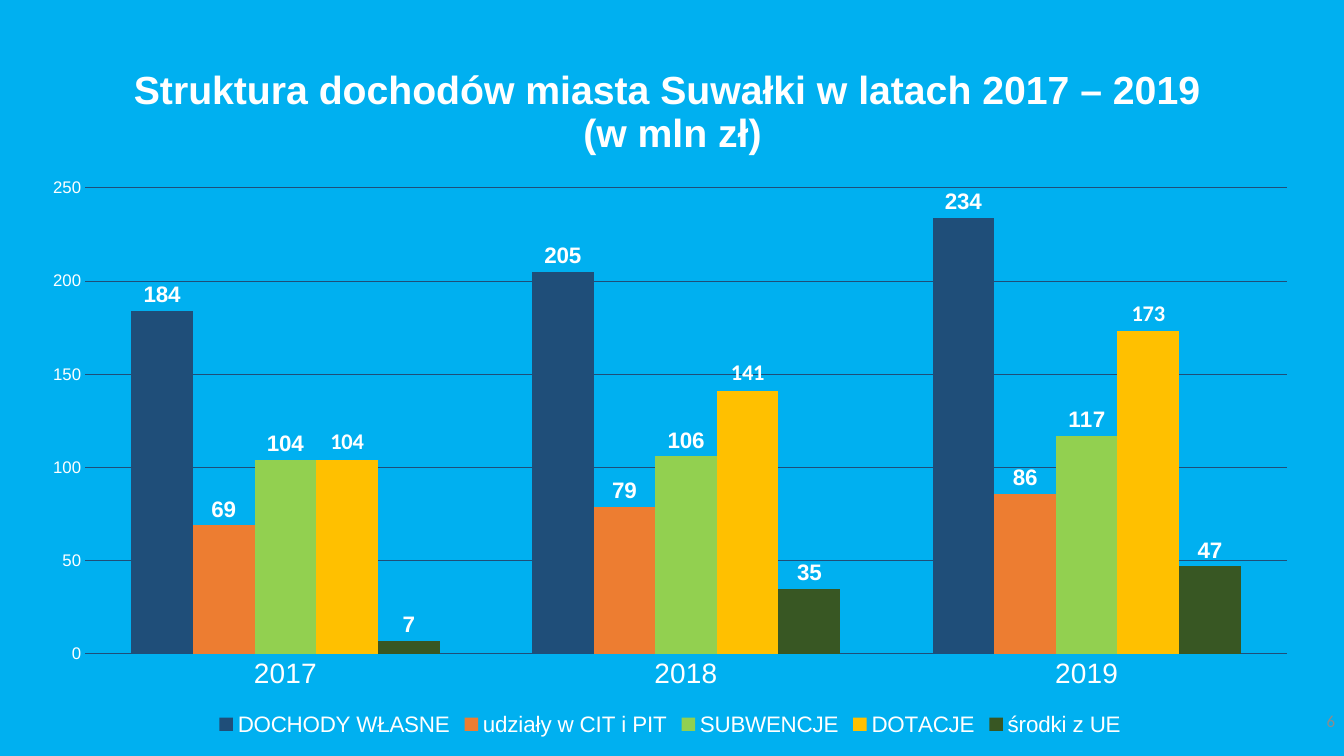
from dataclasses import dataclass

from lxml.etree import SubElement
from pptx import Presentation
from pptx.chart.data import CategoryChartData
from pptx.dml.color import RGBColor
from pptx.enum.chart import XL_CHART_TYPE as ChartType
from pptx.enum.chart import XL_LABEL_POSITION as LabelPos
from pptx.enum.chart import XL_LEGEND_POSITION as LegendPos
from pptx.enum.chart import XL_TICK_MARK as Tick
from pptx.enum.text import MSO_ANCHOR as Anchor
from pptx.enum.text import PP_ALIGN as Align
from pptx.oxml.ns import qn
from pptx.util import Inches, Pt

SKY = RGBColor(0x00, 0xB0, 0xF0)
WHITE = RGBColor(0xFF, 0xFF, 0xFF)
BLACK = RGBColor(0x00, 0x00, 0x00)
GREY = RGBColor(0x8C, 0x8C, 0x8C)
NAVY = RGBColor(0x1F, 0x4E, 0x79)
ORANGE = RGBColor(0xED, 0x7D, 0x31)
LIME = RGBColor(0x92, 0xD0, 0x50)
GOLD = RGBColor(0xFF, 0xC0, 0x00)
FOREST = RGBColor(0x38, 0x57, 0x23)

WIDTH, HEIGHT = Inches(13.33), Inches(7.5)
YEARS = ("2017", "2018", "2019")


@dataclass(frozen=True)
class Area:
    """A rectangle in percent of the slide's width and height."""
    left: float
    top: float
    width: float
    height: float

    def emu(self) -> tuple[int, ...]:
        return tuple(int(share * side / 100) for share, side in zip(
            (self.left, self.top, self.width, self.height),
            (WIDTH, HEIGHT, WIDTH, HEIGHT)))


@dataclass(frozen=True)
class Income:
    name: str
    values: tuple[int, ...]
    color: RGBColor
    label_font: str = "Arial"


@dataclass(frozen=True)
class Caption:
    area: Area
    lines: tuple[str, ...]
    align: Align
    spacing: float
    color: RGBColor
    font: dict


INCOMES = (
    Income("DOCHODY WŁASNE", (184, 205, 234), NAVY),
    Income("udziały w CIT i PIT", (69, 79, 86), ORANGE),
    Income("SUBWENCJE", (104, 106, 117), LIME),
    Income("DOTACJE", (104, 141, 173), GOLD, "Calibri"),
    Income("środki z UE", (7, 35, 47), FOREST),
)
CAPTIONS = (
    Caption(Area(6.9, 5.33, 86.27, 19.33),
            ("Struktura dochodów miasta Suwałki w latach 2017 – 2019 ", "(w mln zł)"),
            Align.CENTER, 0.9, WHITE, {"name": "Arial", "size": Pt(28), "bold": True}),
    Caption(Area(70.67, 92.67, 29.41, 5.33), ("6",),
            Align.RIGHT, 1.0, GREY, {"name": "Calibri", "size": Pt(12)}),
)
CHART_AREA = Area(2.03, 22.13, 95.65, 75.87)
# Plot rectangle as shares of the chart
PLOT = {"x": 0.045, "y": 0.036, "w": 0.935, "h": 0.8125}


def set_format(target, **values) -> None:
    for name, value in values.items():
        setattr(target, name, value)


def set_font(font, color: RGBColor, **values) -> None:
    set_format(font, **values)
    font.color.rgb = color


def add_caption(s, caption: Caption) -> None:
    tf = s.shapes.add_textbox(*caption.area.emu()).text_frame
    set_format(tf, word_wrap=True, vertical_anchor=Anchor.MIDDLE)
    p = tf.paragraphs[0]
    set_format(p, alignment=caption.align, line_spacing=caption.spacing)
    for i, line in enumerate(caption.lines):
        if i:
            p.add_line_break()
        r = p.add_run()
        r.text = line
        set_font(r.font, caption.color, **caption.font)


def place_plot(chart) -> None:
    """Fix the inner plot area inside the chart."""
    area = chart._chartSpace.chart.plotArea
    for old in area.findall(qn("c:layout")):
        area.remove(old)
    layout = SubElement(area, qn("c:layout"))
    area.insert(0, layout)
    manual = SubElement(layout, qn("c:manualLayout"))
    settings = {"layoutTarget": "inner", "xMode": "edge", "yMode": "edge", **PLOT}
    for tag, value in settings.items():
        SubElement(manual, qn(f"c:{tag}")).set("val", str(value))


def style_axes(chart) -> None:
    for axis, size in ((chart.category_axis, 20), (chart.value_axis, 12)):
        set_format(axis, major_tick_mark=Tick.NONE, minor_tick_mark=Tick.NONE)
        axis.format.line.fill.background()
        set_font(axis.tick_labels.font, WHITE, name="Arial", size=Pt(size), bold=False)
    axis = chart.value_axis
    set_format(axis, minimum_scale=0, maximum_scale=250, major_unit=50,
               has_major_gridlines=True)
    grid = axis.major_gridlines.format.line
    grid.color.rgb = NAVY
    grid.width = Pt(0.75)


def add_income_chart(s) -> None:
    data = CategoryChartData()
    data.categories = YEARS
    for income in INCOMES:
        data.add_series(income.name, income.values)
    chart = s.shapes.add_chart(
        ChartType.COLUMN_CLUSTERED, *CHART_AREA.emu(), data).chart
    set_format(chart, has_title=False, has_legend=True)
    set_font(chart.font, BLACK, name="Calibri", size=Pt(10))
    set_format(chart.legend, position=LegendPos.BOTTOM, include_in_layout=False)
    set_font(chart.legend.font, WHITE, name="Arial", size=Pt(16))
    plot = chart.plots[0]
    set_format(plot, gap_width=150, overlap=0, vary_by_categories=False)
    for series, income in zip(plot.series, INCOMES):
        fill = series.format.fill
        fill.solid()
        fill.fore_color.rgb = income.color
        labels = series.data_labels
        set_format(labels, show_value=True, position=LabelPos.OUTSIDE_END)
        set_font(labels.font, WHITE, name=income.label_font, size=Pt(16), bold=True)
    style_axes(chart)
    place_plot(chart)


def main() -> None:
    prs = Presentation()
    set_format(prs, slide_width=WIDTH, slide_height=HEIGHT)
    s = prs.slides.add_slide(prs.slide_layouts[6])
    background = s.background.fill
    background.solid()
    background.fore_color.rgb = SKY
    title, page_number = CAPTIONS
    add_caption(s, title)
    add_income_chart(s)
    add_caption(s, page_number)
    prs.save("out.pptx")


if __name__ == "__main__":
    main()
